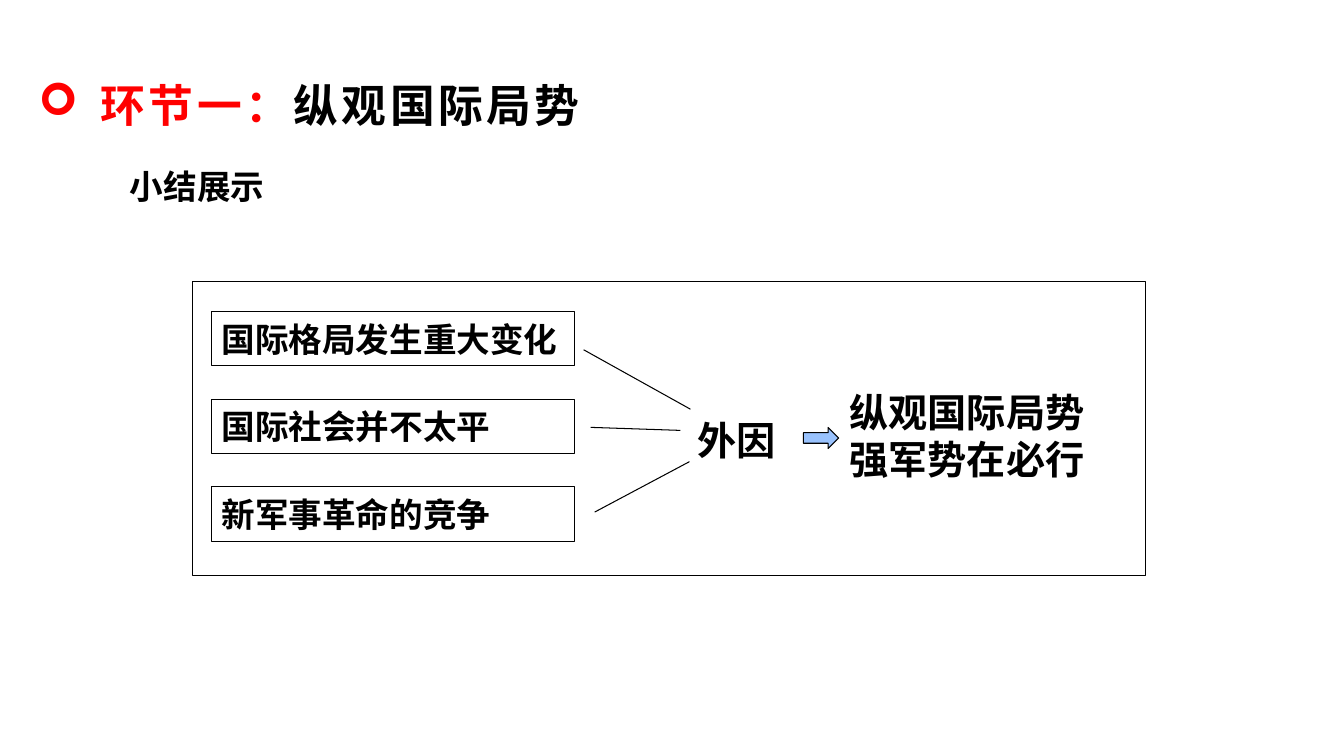
import pptx
import pptx.util
import pptx.dml.color
import pptx.enum.shapes
import pptx.enum.text
import pptx.oxml.ns
from lxml import etree

SHAPE = pptx.enum.shapes.MSO_SHAPE
ANCHOR = pptx.enum.text.MSO_ANCHOR
CJK = "Noto Sans CJK SC"
BLACK, RED, BLUE = "000000", "FF0000", "99C2FD"


def color(code):
    return pptx.dml.color.RGBColor.from_string(code)


def grid(*cells):
    """Turn grid cells, ten to the inch, into lengths."""
    return [pptx.util.Inches(cell / 10) for cell in cells]


def child(parent, tag, **attrs):
    return etree.SubElement(parent, pptx.oxml.ns.qn(tag), attrs)


class Board:
    def __init__(self, deck):
        self.slide = deck.slides.add_slide(deck.slide_layouts[6])
        self.shapes = self.slide.shapes

    def style(self, para, size, face):
        font = para.font
        font.size, font.bold, font.name = pptx.util.Pt(size), True, face
        font.color.rgb = color(BLACK)
        child(para._p.pPr.defRPr, "a:ea", typeface=CJK)

    def fill_text(self, frame, lines, size, face, anchor):
        frame.word_wrap, frame.vertical_anchor = True, anchor
        frame.text = "\n".join(lines)
        for para in frame.paragraphs:
            para.alignment = pptx.enum.text.PP_ALIGN.LEFT
            self.style(para, size, face)

    def text(self, area, lines, size, face=CJK):
        box = self.shapes.add_textbox(*grid(*area))
        self.fill_text(box.text_frame, lines, size, face, ANCHOR.TOP)

    def title(self, area, parts):
        """Add a bulleted heading from (text, colour) parts."""
        frame = self.shapes.add_textbox(*grid(*area)).text_frame
        frame.word_wrap, frame.vertical_anchor = True, ANCHOR.MIDDLE
        frame.margin_left, frame.margin_right = grid(0.7, 0.7)
        frame.margin_top, frame.margin_bottom = grid(0.3, 0.3)
        para = frame.paragraphs[0]
        props = para._p.get_or_add_pPr()
        indent = grid(6.2)[0]
        props.set("marL", str(indent))
        props.set("indent", str(-indent))
        child(props, "a:buFont", typeface="Wingdings")
        child(props, "a:buChar", char="➢")
        self.style(para, 32, CJK)
        props.find(pptx.oxml.ns.qn("a:defRPr")).set("spc", "240")
        for words, code in parts:
            run = para.add_run()
            run.text = words
            run.font.color.rgb = color(code)

    def shape(self, area, kind=SHAPE.RECTANGLE, fill=None):
        item = self.shapes.add_shape(kind, *grid(*area))
        item.shadow.inherit = False
        if fill:
            item.fill.solid()
            item.fill.fore_color.rgb = color(fill)
        else:
            item.fill.background()
        self.edge(item)
        return item

    def label(self, area, words):
        frame = self.shape(area).text_frame
        self.fill_text(frame, [words], 24, "Arial", ANCHOR.MIDDLE)

    def edge(self, item):
        item.line.color.rgb = color(BLACK)
        item.line.width = pptx.util.Pt(0.75)

    def line(self, ends):
        kind = pptx.enum.shapes.MSO_CONNECTOR.STRAIGHT
        item = self.shapes.add_connector(kind, *grid(*ends))
        self.edge(item)
        child(item._element.spPr, "a:effectLst")


def main():
    deck = pptx.Presentation()
    deck.slide_width, deck.slide_height = grid(133.33, 75)
    board = Board(deck)
    board.title((3.1, 7, 120, 6.7),
                [("环节一：", RED), ("纵观国际局势", BLACK)])
    board.text((11.9, 16, 24.8, 5), ["小结展示"], 24, "Arial")

    board.shape((19.1, 27.9, 94.5, 29.2))
    causes = ["国际格局发生重大变化", "国际社会并不太平", "新军事革命的竞争"]
    for row, cause in enumerate(causes):
        board.label((21, 30.9 + 8.7 * row, 36, 5.4), cause)
    for ends in [(57.9, 34.7, 68.5, 40.6),
                 (58.6, 42.4, 67.5, 42.7),
                 (59, 50.8, 68.4, 45.8)]:
        board.line(ends)

    board.text((68.2, 40.8, 10.8, 5.2), ["外因"], 28)
    board.shape((79.7, 42.4, 3.5, 2.1), SHAPE.RIGHT_ARROW, BLUE)
    board.text((83.3, 38, 30.3, 9), ["纵观国际局势", "强军势在必行"], 28)
    deck.save("out.pptx")


if __name__ == "__main__":
    main()
